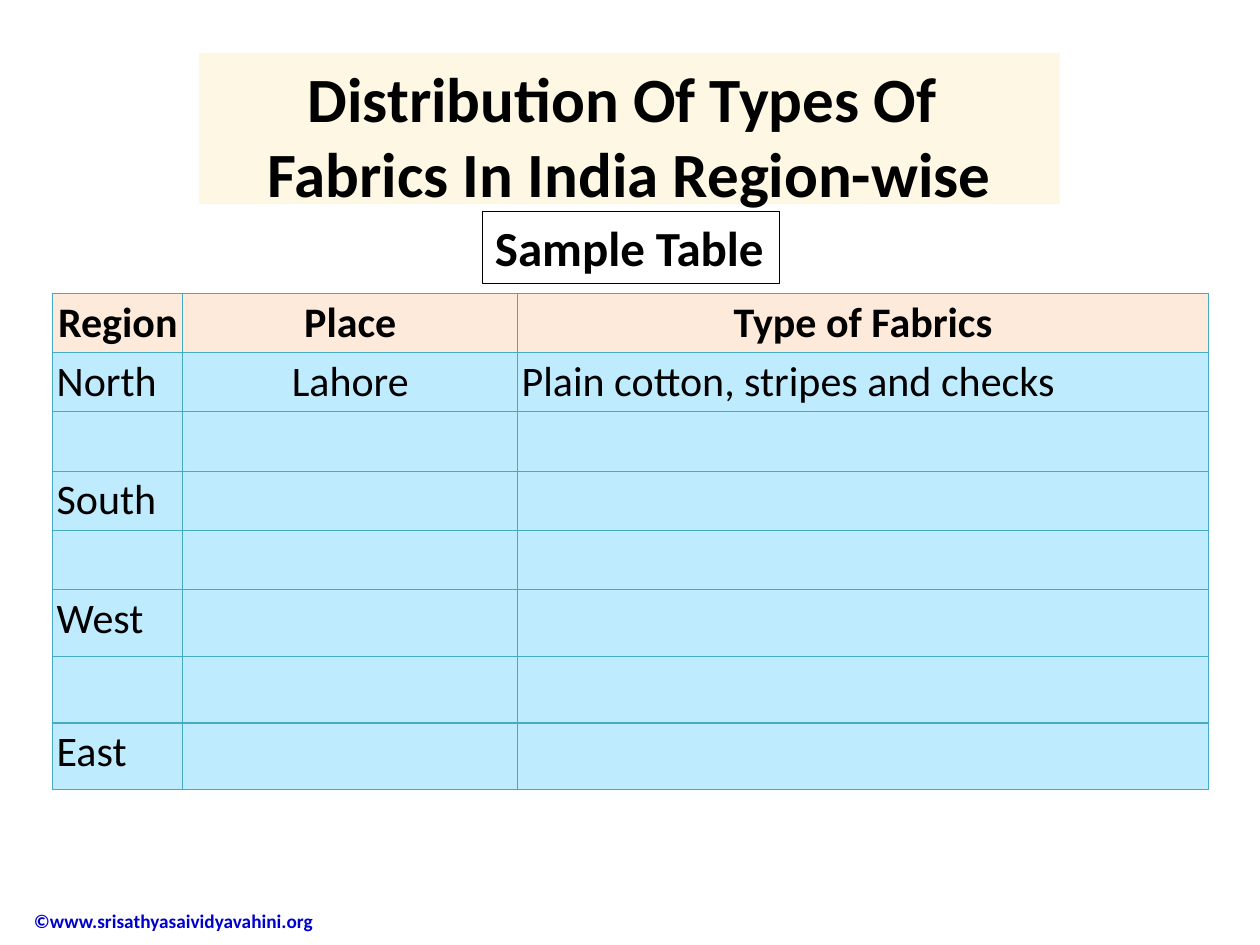
from pptx import Presentation
from pptx.dml.color import RGBColor
from pptx.enum.shapes import MSO_SHAPE
from pptx.enum.text import MSO_ANCHOR, PP_ALIGN
from pptx.oxml import parse_xml
from pptx.oxml.ns import nsdecls
from pptx.util import Inches, Pt

HEADS = ["Region", "Place", "Type of Fabrics"]
ROWS = [
    ["North", "Lahore", "Plain cotton, stripes and checks"],
    ["", "", ""],
    ["South", "", ""],
    ["", "", ""],
    ["West", "", ""],
    ["", "", ""],
    ["East", "", ""],
]
WIDTHS = [1.03, 2.66, 5.48]
HEIGHTS = [0.47] * 5 + [0.53] * 3


def color(code):
    """Turn a hex string into a colour."""
    return RGBColor.from_string(code)


def write(frame, text, size, bold=True, ink="000000", align=PP_ALIGN.LEFT):
    """Write one styled paragraph into a text frame."""
    para = frame.paragraphs[0]
    para.text = text
    para.alignment = align
    font = para.font
    font.name = "Calibri"
    font.size = Pt(size)
    font.bold = bold
    font.color.rgb = color(ink)


def add_box(slide, place, fill=None, line=None):
    """Add a plain rectangle and return its text frame."""
    box = slide.shapes.add_shape(MSO_SHAPE.RECTANGLE, *map(Inches, place))
    box.shadow.inherit = False
    if fill:
        box.fill.solid()
        box.fill.fore_color.rgb = color(fill)
    else:
        box.fill.background()
    if line:
        box.line.color.rgb = color(line)
        box.line.width = Pt(0.75)
    else:
        box.line.fill.background()
    frame = box.text_frame
    frame.vertical_anchor = MSO_ANCHOR.TOP
    return frame


def add_rules(cell, ink):
    """Draw a thin line on all four sides of a cell."""
    props = cell._tc.get_or_add_tcPr()
    for side in "LRTB":
        props.append(parse_xml(
            f'<a:ln{side} {nsdecls("a")} w="{Pt(0.75)}"><a:solidFill>'
            f'<a:srgbClr val="{ink}"/></a:solidFill></a:ln{side}>'))


def style_cell(cell, text, head, align):
    """Fill, rule and write one table cell."""
    cell.margin_left = cell.margin_right = Inches(0.03)
    cell.margin_top = cell.margin_bottom = Inches(0.03)
    add_rules(cell, "46AAC5")
    cell.fill.solid()
    cell.fill.fore_color.rgb = color("FDEADA" if head else "BFEBFF")
    write(cell.text_frame, text, 24, bold=head, align=align)


def add_grid(slide):
    """Add the table of regions, places and fabrics."""
    data = [HEADS] + ROWS
    place = map(Inches, (0.42, 2.33, sum(WIDTHS), sum(HEIGHTS)))
    table = slide.shapes.add_table(len(data), len(HEADS), *place).table
    table.first_row = table.horz_banding = False
    for col, width in zip(table.columns, WIDTHS):
        col.width = Inches(width)
    for r, (texts, height) in enumerate(zip(data, HEIGHTS)):
        table.rows[r].height = Inches(height)
        for c, text in enumerate(texts):
            mid = r == 0 or c == 1
            align = PP_ALIGN.CENTER if mid else PP_ALIGN.LEFT
            style_cell(table.cell(r, c), text, r == 0, align)


def add_footer(slide):
    """Add the copyright line at the bottom left."""
    place = map(Inches, (0.17, 7.1, 2.52, 0.41))
    frame = slide.shapes.add_textbox(*place).text_frame
    frame.word_wrap = True
    frame.vertical_anchor = MSO_ANCHOR.MIDDLE
    write(frame, "©www.srisathyasaividyavahini.org", 11, ink="0000CC")


def main():
    """Build the slide and save it."""
    deck = Presentation()
    deck.slide_width, deck.slide_height = Inches(10), Inches(7.5)
    slide = deck.slides.add_slide(deck.slide_layouts[6])
    add_footer(slide)
    add_grid(slide)
    title = add_box(slide, (1.58, 0.42, 6.83, 1.2), fill="FDF7E3")
    title.word_wrap = True
    write(title, "Distribution Of Types Of \vFabrics In India Region-wise", 36,
          align=PP_ALIGN.CENTER)
    label = add_box(slide, (3.83, 1.68, 2.36, 0.57), line="000000")
    label.word_wrap = False
    write(label, "Sample Table", 28)
    deck.save("out.pptx")


if __name__ == "__main__":
    main()
